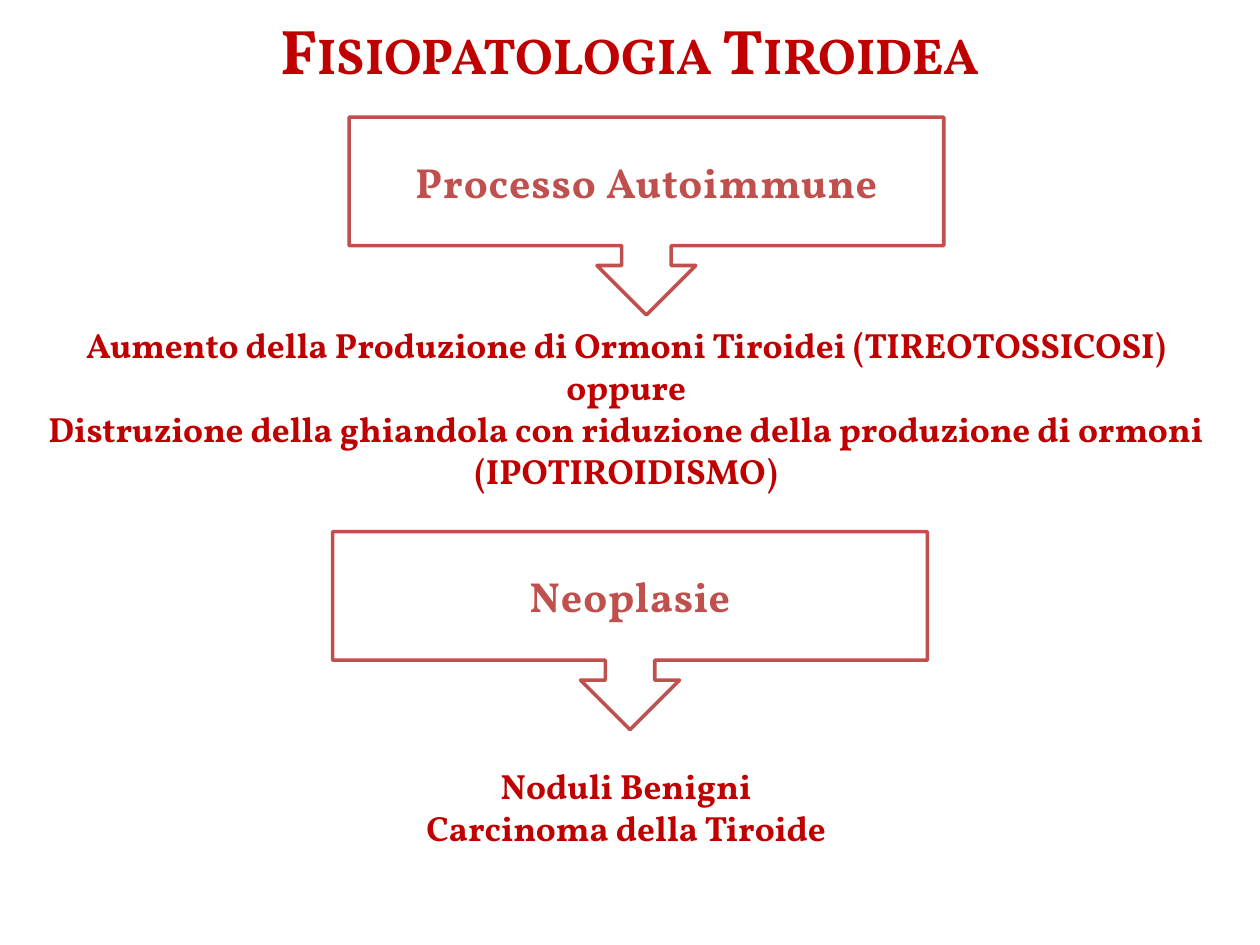
from pptx import Presentation, util as u
from pptx.dml.color import RGBColor
from pptx.enum import shapes, text
from pptx.oxml.ns import qn
from lxml import etree

# Content
TITLE = "Fisiopatologia Tiroidea"
# Each stage: callout label, callout left and top, outcomes, outcomes top and height
STAGES = [
    ("Processo Autoimmune", (2.77, 0.93),
     ["Aumento della Produzione di Ormoni Tiroidei (TIREOTOSSICOSI)",
      "oppure",
      "Distruzione della ghiandola con riduzione della produzione di ormoni (IPOTIROIDISMO)"],
     (2.52, 1.45)),
    ("Neoplasie", (2.64, 4.22),
     ["Noduli Benigni", "Carcinoma della Tiroide"],
     (6.02, 0.8)),
]
COLORS = {"text": "C00000", "callout": "C0504D", "fill": "FFFFFF"}
FONT = "Vollkorn"
CALLOUT_SIZE = (4.72, 1.57)


def color(name):
    return RGBColor.from_string(COLORS[name])


def place(shape, left, top, width, height):
    shape.left, shape.top = u.Inches(left), u.Inches(top)
    shape.width, shape.height = u.Inches(width), u.Inches(height)


def write(shape, lines, size, color_name, anchor, **run_attributes):
    frame = shape.text_frame
    frame.text = "\n".join(lines)
    frame.word_wrap = True
    frame.auto_size = text.MSO_AUTO_SIZE.NONE
    frame.vertical_anchor = anchor
    for para in frame.paragraphs:
        para.alignment = text.PP_ALIGN.CENTER
        para.space_before = u.Pt(0)
        for span in para.runs:
            font = span.font
            font.name, font.size, font.bold = FONT, u.Pt(size), True
            font.color.rgb = color(color_name)
            for key, value in run_attributes.items():
                span._r.get_or_add_rPr().set(key, value)


def remove_bullets(shape):
    for para in shape.text_frame.paragraphs:
        properties = para._p.get_or_add_pPr()
        properties.set("marL", "0")
        properties.set("indent", "0")
        etree.SubElement(properties, qn("a:buNone"))


deck = Presentation()
deck.slide_width, deck.slide_height = u.Inches(10), u.Inches(7.5)
page = deck.slides.add_slide(deck.slide_layouts.get_by_name("Two Content"))

# Title
title, *bodies = page.placeholders
place(title, 0.55, 0.04, 8.9, 0.71)
write(title, [TITLE], 36, "text", text.MSO_ANCHOR.TOP, cap="small")

# Callouts, each pointing to its outcomes
for body, (label, corner, outcomes, (top, height)) in zip(bodies, STAGES):
    callout = page.shapes.add_shape(
        shapes.MSO_SHAPE.DOWN_ARROW_CALLOUT,
        *map(u.Inches, corner + CALLOUT_SIZE))
    callout.shadow.inherit = False
    callout.fill.solid()
    callout.fill.fore_color.rgb = color("fill")
    callout.line.color.rgb = color("callout")
    callout.line.width = u.Pt(2)
    write(callout, [label], 24, "callout", text.MSO_ANCHOR.MIDDLE, spc="50")

    place(body, -0.03, top, 10, height)
    write(body, outcomes, 20, "text", text.MSO_ANCHOR.TOP)
    remove_bullets(body)

deck.save("out.pptx")
